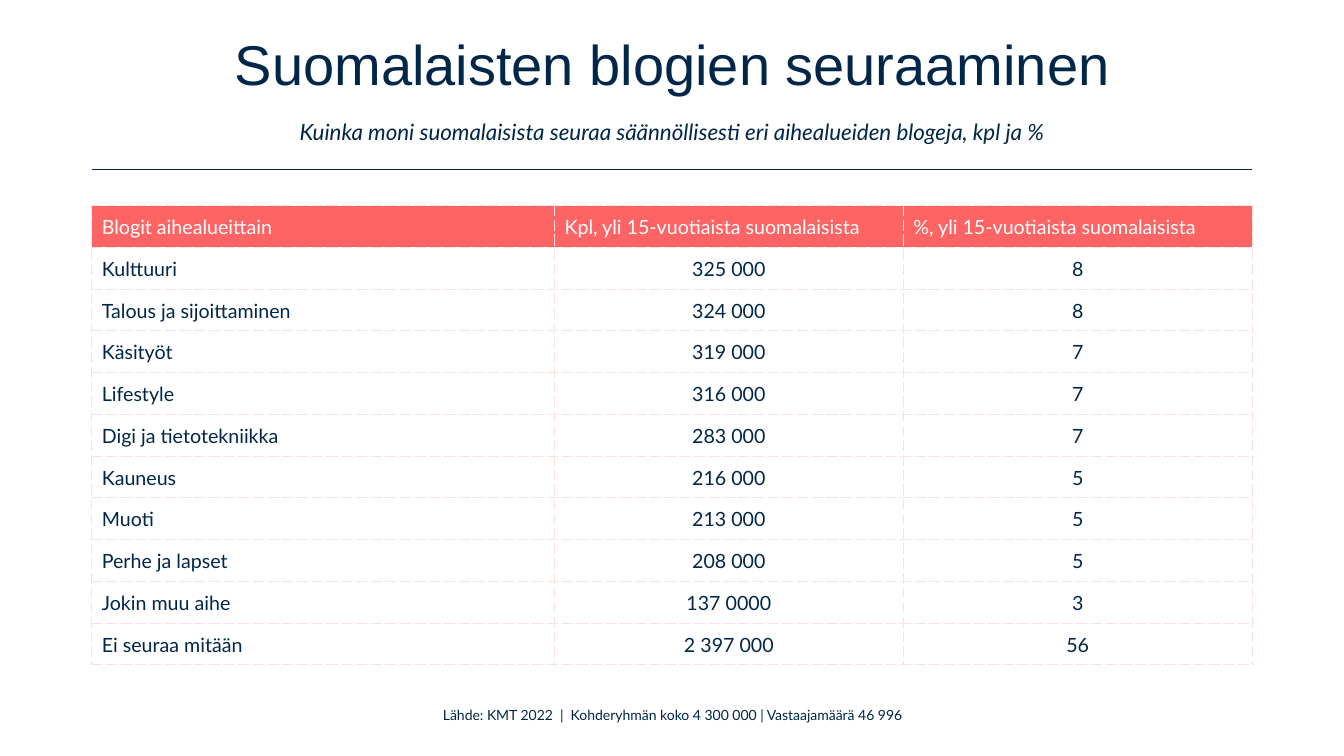
from dataclasses import dataclass

from lxml.etree import SubElement
from pptx import Presentation
from pptx.dml.color import RGBColor
from pptx.enum.shapes import MSO_CONNECTOR
from pptx.enum.text import MSO_ANCHOR, MSO_AUTO_SIZE, PP_ALIGN
from pptx.oxml import parse_xml
from pptx.oxml.ns import nsdecls, qn
from pptx.util import Inches, Pt


@dataclass(frozen=True)
class Theme:
    navy: str = "002649"
    coral: str = "FF6464"
    pink: str = "FFE0E0"
    white: str = "FFFFFF"
    title_font: str = "Arial"
    body_font: str = "Lato"
    title: int = 40
    subtitle: int = 16
    table: int = 14
    source: int = 10


THEME = Theme()
HEADER = ("Blogit aihealueittain", "Kpl, yli 15-vuotiaista suomalaisista",
          "%, yli 15-vuotiaista suomalaisista")
BLOGS = [
    ("Kulttuuri", "325 000", "8"),
    ("Talous ja sijoittaminen", "324 000", "8"),
    ("Käsityöt", "319 000", "7"),
    ("Lifestyle", "316 000", "7"),
    ("Digi ja tietotekniikka", "283 000", "7"),
    ("Kauneus", "216 000", "5"),
    ("Muoti", "213 000", "5"),
    ("Perhe ja lapset", "208 000", "5"),
    ("Jokin muu aihe", "137 0000", "3"),
    ("Ei seuraa mitään", "2 397 000", "56"),
]


def add_run(p, text, size, color=THEME.navy, font=THEME.body_font, italic=False):
    r = p.add_run()
    r.text = text
    r.font.size = Pt(size)
    r.font.name = font
    r.font.italic = italic
    r.font.color.rgb = RGBColor.from_string(color)


def add_title(s, x, y, w, h):
    sp = s.shapes.title
    sp.left, sp.top, sp.width, sp.height = map(Inches, (x, y, w, h))
    tf = sp.text_frame
    tf.word_wrap = True
    tf.auto_size = MSO_AUTO_SIZE.NONE
    tf.vertical_anchor = MSO_ANCHOR.MIDDLE
    p = tf.paragraphs[0]
    p.alignment = PP_ALIGN.CENTER
    p.line_spacing = Pt(35)
    p.space_after = Pt(18)
    add_run(p, "Suomalaisten blogien seuraaminen", THEME.title, font=THEME.title_font)
    p.add_line_break()
    add_run(p, "Kuinka moni suomalaisista seuraa säännöllisesti eri aihealueiden "
               "blogeja, kpl ja %", THEME.subtitle, italic=True)


def add_rule(s, x, y, w):
    line = s.shapes.add_connector(MSO_CONNECTOR.STRAIGHT, Inches(x), Inches(y),
                                  Inches(x + w), Inches(y))
    line.line.color.rgb = RGBColor.from_string(THEME.navy)
    line.line.width = Pt(1)
    SubElement(line._element.spPr, qn("a:effectLst"))


def add_borders(cell):
    """Put a thin dashed line on all four sides of the cell."""
    tcPr = cell._tc.get_or_add_tcPr()
    for i, side in enumerate("LRTB"):
        tcPr.insert(i, parse_xml(
            f'<a:ln{side} {nsdecls("a")} w="{Pt(1)}"><a:solidFill>'
            f'<a:srgbClr val="{THEME.pink}"/></a:solidFill>'
            f'<a:prstDash val="sysDash"/></a:ln{side}>'))


def fill_cell(cell, text, is_header, is_label):
    cell.vertical_anchor = MSO_ANCHOR.MIDDLE
    p = cell.text_frame.paragraphs[0]
    if is_header:
        cell.fill.solid()
        cell.fill.fore_color.rgb = RGBColor.from_string(THEME.coral)
    else:
        cell.fill.background()
        cell.margin_left = Inches(0.1 if is_label else 0.01)
        cell.margin_right = cell.margin_top = Inches(0.01)
        cell.margin_bottom = 0
        p.alignment = PP_ALIGN.LEFT if is_label else PP_ALIGN.CENTER
    add_run(p, text, THEME.table, THEME.white if is_header else THEME.navy)
    add_borders(cell)


def add_blog_table(s, x, y, w, h):
    rows = [HEADER, *BLOGS]
    table = s.shapes.add_table(len(rows), len(HEADER), Inches(x), Inches(y),
                               Inches(w), Inches(h)).table
    table.horz_banding = False
    number_w = 3.46
    for col, width in zip(table.columns, (w - 2 * number_w, number_w, number_w)):
        col.width = Inches(width)
    for i, values in enumerate(rows):
        for j, text in enumerate(values):
            fill_cell(table.cell(i, j), text, i == 0, j == 0)


def add_source(s, x, y, w, h):
    tf = s.shapes.add_textbox(*map(Inches, (x, y, w, h))).text_frame
    tf.word_wrap = True
    p = tf.paragraphs[0]
    p.alignment = PP_ALIGN.CENTER
    add_run(p, "Lähde: KMT 2022\u00a0 | \u00a0Kohderyhmän koko 4 300 000 | "
               "Vastaajamäärä 46 996".replace("\u00a0", " "), THEME.source)


def main():
    prs = Presentation()
    prs.slide_width, prs.slide_height = Inches(13.33), Inches(7.5)
    s = prs.slides.add_slide(prs.slide_layouts[5])
    left, width = 0.91, 11.51
    add_title(s, left, 0.42, width, 1.07)
    add_rule(s, left, 1.68, width)
    add_blog_table(s, left, 2.04, width, 4.56)
    add_source(s, 4.08, 6.96, 5.18, 0.27)
    prs.save("out.pptx")


if __name__ == "__main__":
    main()
